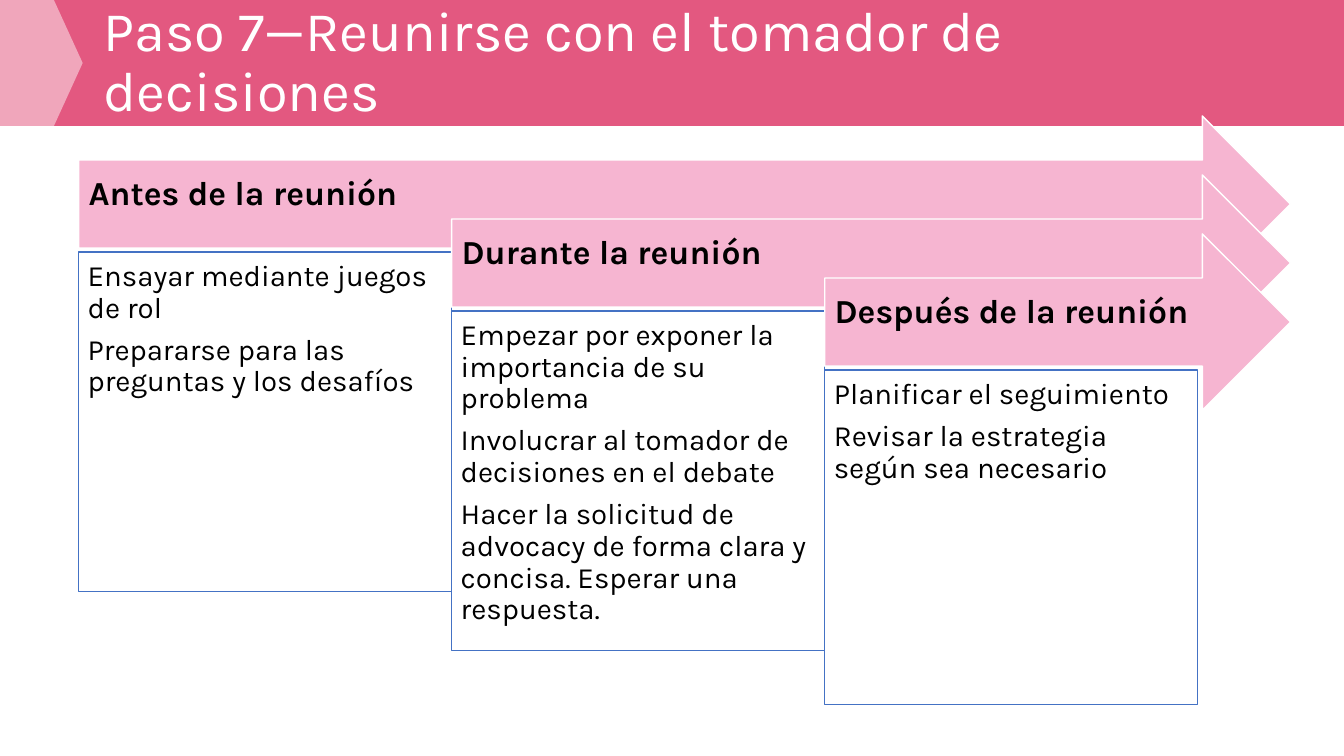
import pptx
import pptx.util
import pptx.dml.color
import pptx.enum.shapes
import pptx.enum.text
import pptx.oxml.ns
import lxml.etree

Inches = pptx.util.Inches
Pt = pptx.util.Pt
SHAPE = pptx.enum.shapes.MSO_SHAPE
ANCHOR = pptx.enum.text.MSO_ANCHOR
ALIGN = pptx.enum.text.PP_ALIGN

PINK, ROSE, WHITE, BLACK, BLUE = "E35880", "F6B5D1", "FFFFFF", "000000", "4472C4"
LEFT, TOP, ARROW_TIP = 0.78, 1.15, 12.8
COLUMN_W, STEP_DOWN = 3.7, 0.585
ARROW_H, BOX_DROP = 1.75, 1.35

TITLE = "Paso 7—Reunirse con el tomador de decisiones"
STAGES = [
    ("Antes de la reunión", 3.37, [
        "Ensayar mediante juegos de rol",
        "Prepararse para las preguntas y los desafíos",
    ]),
    ("Durante la reunión", 3.37, [
        "Empezar por exponer la importancia de su problema",
        "Involucrar al tomador de decisiones en el debate",
        "Hacer la solicitud de advocacy de forma clara y concisa. Esperar una respuesta.",
    ]),
    ("Después de la reunión", 3.32, [
        "Planificar el seguimiento",
        "Revisar la estrategia según sea necesario",
    ]),
]


def rgb(value):
    return pptx.dml.color.RGBColor.from_string(value)


def set_all(obj, values):
    for name, value in values.items():
        setattr(obj, name, value)


def add_shape(s, kind, box, fill, line=None, adjustments=(), alpha=None):
    sp = s.shapes.add_shape(kind, *map(Inches, box))
    sp.shadow.inherit = False
    for i, value in enumerate(adjustments):
        sp.adjustments[i] = value
    sp.fill.solid()
    sp.fill.fore_color.rgb = rgb(fill)
    if line:
        sp.line.color.rgb = rgb(line)
        sp.line.width = Pt(1)
    else:
        sp.line.fill.background()
    if alpha:
        color = sp.fill._xPr.find(".//" + pptx.oxml.ns.qn("a:srgbClr"))
        lxml.etree.SubElement(color, pptx.oxml.ns.qn("a:alpha"), val=str(alpha * 1000))
    return sp


def write(sp, texts, size, color, anchor, insets, bold=False, after=0):
    tf = sp.text_frame
    left, top, right, bottom = map(Inches, insets)
    set_all(tf, {"word_wrap": True, "vertical_anchor": anchor,
                 "margin_left": left, "margin_top": top,
                 "margin_right": right, "margin_bottom": bottom})
    for i, text in enumerate(texts):
        p = tf.add_paragraph() if i else tf.paragraphs[0]
        set_all(p, {"alignment": ALIGN.LEFT, "line_spacing": 0.9,
                    "space_after": Pt(after)})
        r = p.add_run()
        r.text = text
        set_all(r.font, {"name": "Karla", "size": Pt(size), "bold": bold})
        r.font.color.rgb = rgb(color)


def add_header(s):
    add_shape(s, SHAPE.RECTANGLE, (0, 0, 13.33, 1.25), PINK)
    add_shape(s, SHAPE.PENTAGON, (0, 0, 0.82, 1.25), WHITE,
              adjustments=[0.348], alpha=47)
    sp = s.shapes.add_textbox(*map(Inches, (0.93, 0.2, 11.98, 0.86)))
    write(sp, [TITLE], 40, WHITE, ANCHOR.MIDDLE, (0.1, 0.05, 0.1, 0.05))


def add_stage(s, index, heading, box_height, points):
    x = LEFT + index * COLUMN_W
    y = TOP + index * STEP_DOWN
    arrow = add_shape(s, SHAPE.RIGHT_ARROW, (x, y, ARROW_TIP - x, ARROW_H),
                      ROSE, WHITE, [0.5, 0.5])
    write(arrow, [heading], 24, BLACK, ANCHOR.MIDDLE, (0.1, 0.1, 0.28, 0.28), bold=True)
    box = add_shape(s, SHAPE.RECTANGLE, (x, y + BOX_DROP, COLUMN_W, box_height),
                    WHITE, BLUE)
    write(box, points, 21, BLACK, ANCHOR.TOP, [0.09] * 4, after=7.35)


def main():
    prs = pptx.Presentation()
    set_all(prs, {"slide_width": Inches(13.33), "slide_height": Inches(7.5)})
    s = prs.slides.add_slide(prs.slide_layouts[6])
    add_header(s)
    for index, stage in enumerate(STAGES):
        add_stage(s, index, *stage)
    prs.save("out.pptx")


if __name__ == "__main__":
    main()
